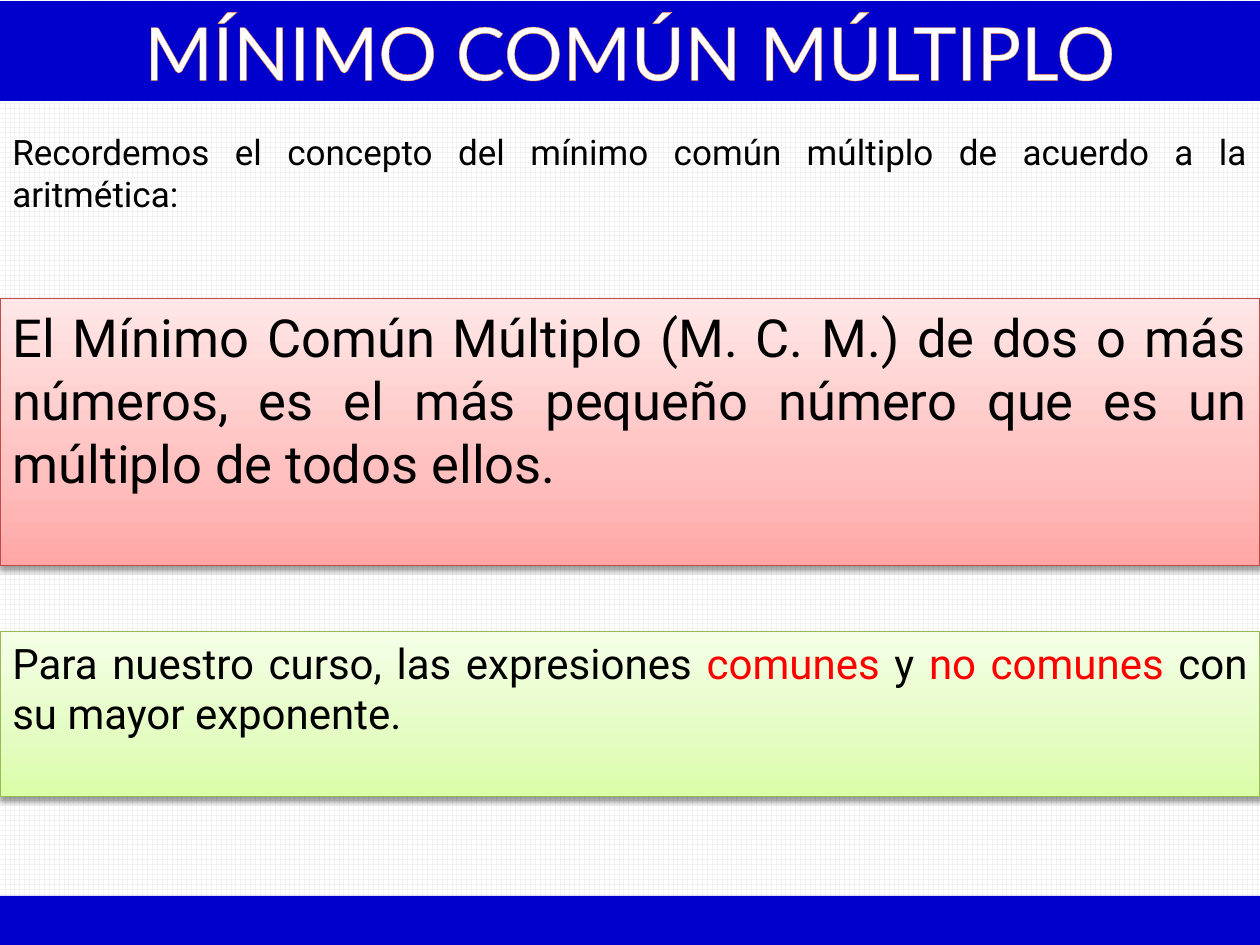
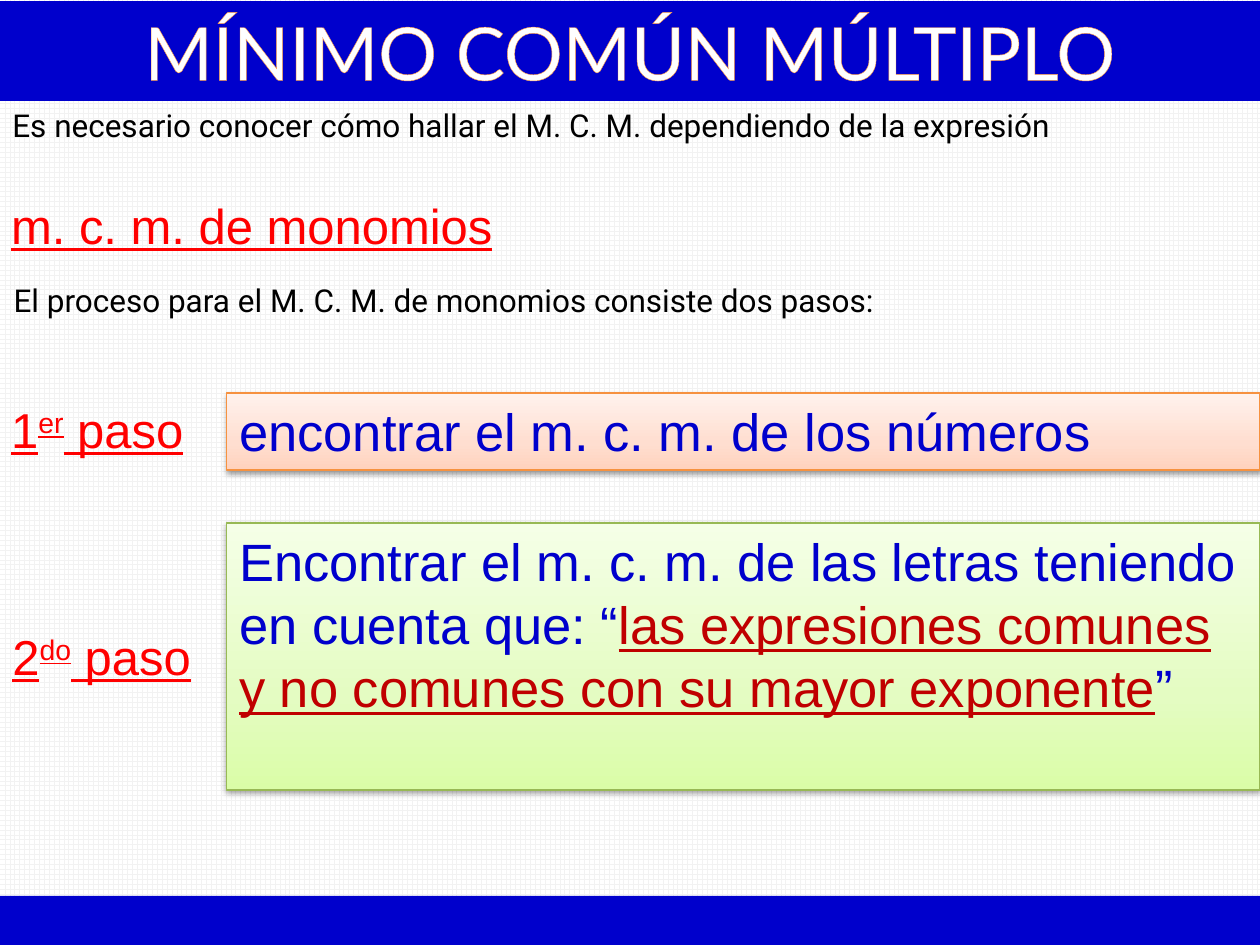
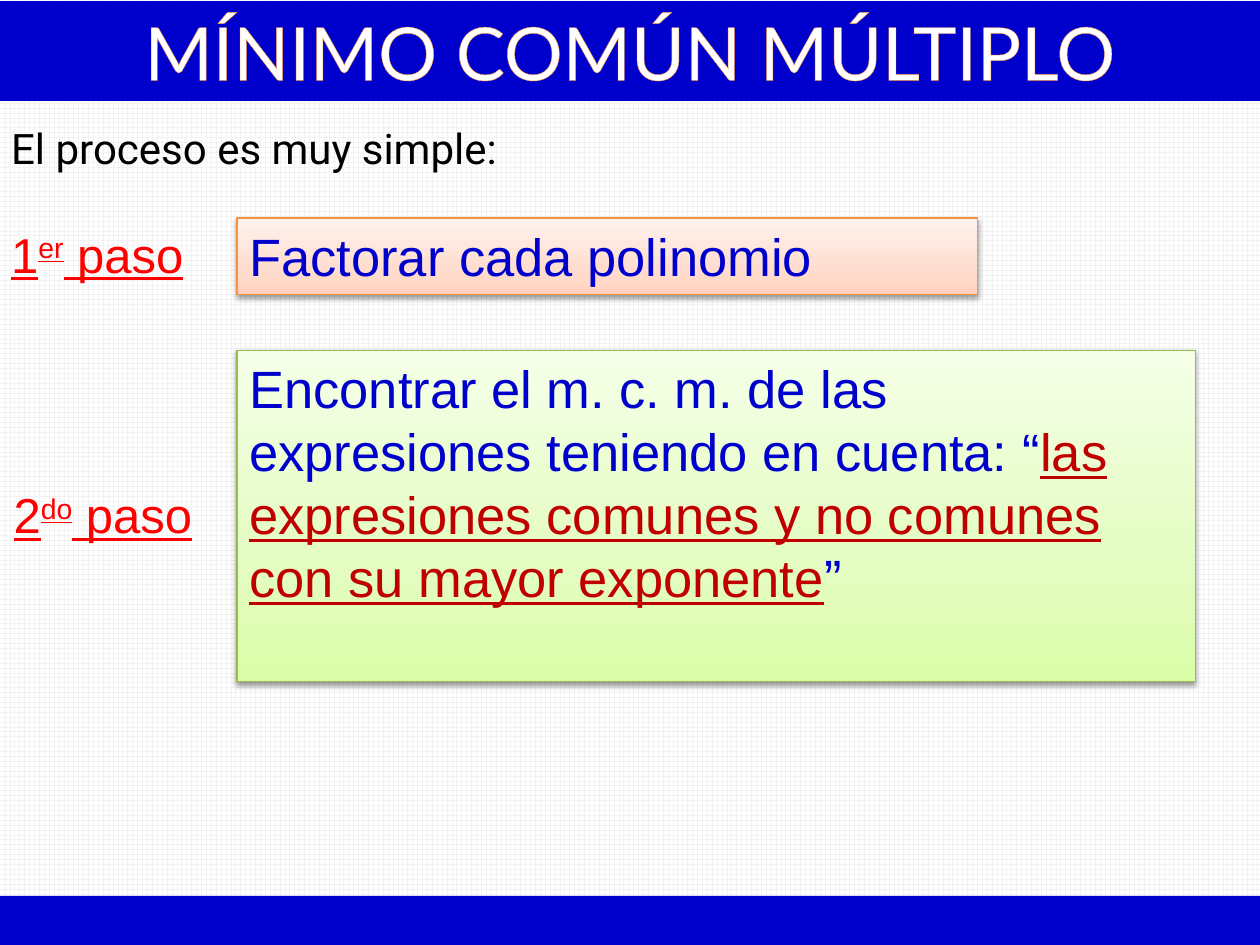
from copy import deepcopy

from lxml import etree
from pptx import Presentation
from pptx import util as u
from pptx.dml.color import RGBColor
from pptx.enum import dml, shapes, text
from pptx.oxml.ns import qn

# Shared look
COLORS = {
    "band": "0000CC", "white": "FFFFFF", "black": "000000", "grid": "F2F2F2",
    "outline": "F79646", "red": "FF0000", "dark_red": "C00000", "blue": "0000CC",
}
PANELS = {  # border, then gradient stops from bottom to top
    "rose": ("BF4C48", ("FFA6A5", "FFC0BF", "FFE7E7")),
    "green": ("98B955", ("DAFDA7", "E4FCC2", "F5FFE7")),
    "peach": ("F69240", ("FFD2BD", "FFDED0", "FFF2ED")),
}
STOP_POSITIONS = (0, 0.35, 1)
TITLE = "MÍNIMO COMÚN MÚLTIPLO"
LEFT, JUSTIFY = text.PP_ALIGN.LEFT, text.PP_ALIGN.JUSTIFY

# Text formats
HEADING = {"name": "Lato", "size": 42, "color": "white"}
BODY = {"name": "Roboto", "size": 18, "color": "black"}
INTRO = BODY | {"size": 20}
LEAD = BODY | {"size": 24}
DEFINITION = BODY | {"size": 30}
LABEL = {"name": "Arial", "size": 28, "color": "red", "underline": True}
STEP = {"name": "Arial", "size": 30, "color": "blue"}
RULE = {"color": "dark_red", "underline": True}
RED = {"color": "red"}
RAISED = {"baseline": 30000}

# Wording used on more than one slide
FIRST = [("1", {}), ("er", RAISED), (" paso", {})]
SECOND = [("2", {}), ("do", RAISED), (" paso", {})]
KEY_RULE = [("las expresiones comunes y no comunes con su mayor exponente", RULE), ("”", {})]

# Each block: (column, row, columns, rows), panel, alignment, format, runs
LESSONS = [
    [
        ((0, 9.9, 100, 7.7), None, JUSTIFY, INTRO,
         [("Recordemos el concepto del mínimo común múltiplo de acuerdo a la aritmética:", {})]),
        ((0, 23.7, 100, 21.2), "rose", JUSTIFY, DEFINITION,
         [("El Mínimo Común Múltiplo (M. C. M.) de dos o más números, es el más "
           "pequeño número que es un múltiplo de todos ellos.", {})]),
        ((0, 50.1, 100, 13.1), "green", JUSTIFY, LEAD,
         [("Para nuestro curso, las expresiones ", {}), ("comunes", RED), (" y ", {}),
          ("no comunes", RED), (" con su mayor exponente.", {})]),
    ],
    [
        ((0, 7.9, 100, 7.1), None, LEFT, BODY,
         [("Es necesario conocer cómo hallar el M. C. M. dependiendo de la expresión", {})]),
        ((-0.1, 15, 43.1, 5.7), None, LEFT, LABEL, [("m. c. m. de monomios", {})]),
        ((0.1, 21.8, 100, 7.1), None, LEFT, BODY,
         [("El proceso para el M. C. M. de monomios consiste dos pasos:", {})]),
        ((-0.1, 31.2, 17.4, 5.7), None, LEFT, LABEL, FIRST),
        ((18, 31.2, 82, 6.1), "peach", LEFT, STEP,
         [("encontrar el m. c. m. de los números", {})]),
        ((0, 49.2, 18, 5.7), None, LEFT, LABEL, SECOND),
        ((18, 41.5, 82, 21.2), "green", LEFT, STEP,
         [("Encontrar el m. c. m. de las letras teniendo en cuenta que: “", {})] + KEY_RULE),
    ],
    [
        ((-0.1, 9.2, 59.6, 5), None, LEFT, LEAD, [("El proceso es muy simple:", {})]),
        ((-0.1, 17.3, 17.4, 5.7), None, LEFT, LABEL, FIRST),
        ((18.8, 17.3, 58.8, 6.1), "peach", LEFT, STEP, [("Factorar cada polinomio", {})]),
        ((0.1, 38, 18, 5.7), None, LEFT, LABEL, SECOND),
        ((18.8, 27.8, 76.1, 26.3), "green", LEFT, STEP,
         [("Encontrar el m. c. m. de las expresiones teniendo en cuenta: “", {})] + KEY_RULE),
    ],
]

deck = Presentation()
deck.slide_width, deck.slide_height = u.Inches(10), u.Inches(7.5)
CELL = deck.slide_width / 100  # the slide is 100 columns by 75 rows


def grid(*cells):
    return [u.Emu(round(cell * CELL)) for cell in cells]


def write(frame, runs, base, align, anchor):
    settings = {"word_wrap": True, "auto_size": text.MSO_AUTO_SIZE.NONE,
                "vertical_anchor": anchor}
    for key, value in settings.items():
        setattr(frame, key, value)
    paragraph = frame.paragraphs[0]
    paragraph.alignment = align
    for words, changes in runs:
        run = paragraph.add_run()
        run.text = words
        for key, value in (base | changes).items():
            if key == "color":
                run.font.color.rgb = RGBColor.from_string(COLORS[value])
            elif key == "baseline":
                run.font._element.set("baseline", str(value))
            else:
                setattr(run.font, key, u.Pt(value) if key == "size" else value)


# Gridded background for every slide
paper = deck.slide_master.background.fill
paper.patterned()
paper.pattern = dml.MSO_PATTERN.LARGE_GRID
paper.fore_color.rgb = RGBColor.from_string(COLORS["grid"])
paper.back_color.rgb = RGBColor.from_string(COLORS["white"])

for blocks in LESSONS:
    slide = deck.slides.add_slide(deck.slide_layouts[5])

    # Title band and footer band
    heading = slide.shapes.title
    heading.left, heading.top, heading.width, heading.height = grid(0, 0.1, 100, 7.9)
    footer = slide.shapes.add_shape(shapes.MSO_SHAPE.RECTANGLE, *grid(0, 71.1, 100, 3.9))
    footer.shadow.inherit = False
    for band in (heading, footer):
        band.fill.solid()
        band.fill.fore_color.rgb = RGBColor.from_string(COLORS["band"])
        band.line.fill.background()
    write(heading.text_frame, [(TITLE, {})], HEADING,
          text.PP_ALIGN.CENTER, text.MSO_ANCHOR.MIDDLE)

    # Orange outline of the title letters
    letters = heading.text_frame.paragraphs[0].runs[0].font._element
    outline = etree.Element(qn("a:ln"), w=str(u.Pt(0.75)))
    ink = etree.SubElement(outline, qn("a:solidFill"))
    etree.SubElement(ink, qn("a:srgbClr"), val=COLORS["outline"])
    letters.insert(0, outline)

    for place, panel, align, style, runs in blocks:
        if panel is None:
            block = slide.shapes.add_textbox(*grid(*place))
        else:
            block = slide.shapes.add_shape(shapes.MSO_SHAPE.RECTANGLE, *grid(*place))
            border, tones = PANELS[panel]
            block.line.color.rgb = RGBColor.from_string(border)
            block.line.width = u.Pt(0.75)

            # Three-stop gradient, darkest at the bottom
            block.fill.gradient()
            block.fill.gradient_angle = 90
            stop_list = block._element.spPr.find(qn("a:gradFill")).find(qn("a:gsLst"))
            stop_list.append(deepcopy(stop_list[-1]))
            for stop, tone, position in zip(block.fill.gradient_stops, tones, STOP_POSITIONS):
                stop.color.rgb = RGBColor.from_string(tone)
                stop.position = position

            # Soft shadow below the panel
            block.shadow.inherit = False
            effects = block._element.spPr.find(qn("a:effectLst"))
            shade = etree.SubElement(effects, qn("a:outerShdw"), blurRad="40000",
                                     dist="20000", dir="5400000", rotWithShape="0")
            tint = etree.SubElement(shade, qn("a:srgbClr"), val=COLORS["black"])
            etree.SubElement(tint, qn("a:alpha"), val="38000")
        write(block.text_frame, runs, style, align, text.MSO_ANCHOR.TOP)

deck.save("out.pptx")
